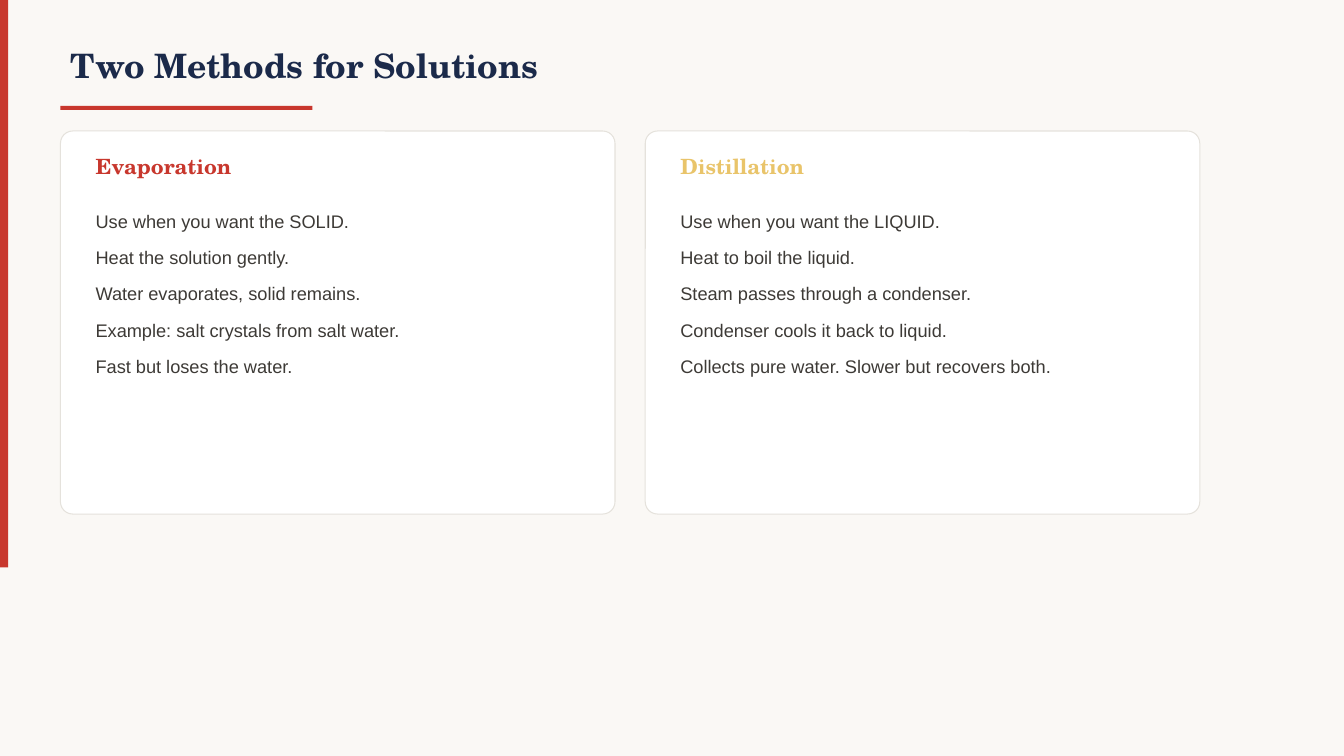
from dataclasses import dataclass

from pptx import Presentation
from pptx.dml.color import RGBColor
from pptx.enum.shapes import MSO_SHAPE
from pptx.enum.text import MSO_ANCHOR, PP_ALIGN
from pptx.shapes.autoshape import Shape
from pptx.slide import Slide
from pptx.text.text import TextFrame
from pptx.util import Inches, Pt

HEADING_FONT = "TeX Gyre Schola"
BODY_FONT = "Arial"
RED = "C8372D"
NAVY = "1B2A4A"
GOLD = "E9C46A"
CHARCOAL = "3D3A36"
CREAM = "FAF8F5"
WHITE = "FFFFFF"
BORDER = "E5E2DC"

MARGIN = 0.6
CARD_TOP = 1.3
CARD_WIDTH = 5.5
CARD_HEIGHT = 3.8
CARD_GAP = 0.3
CARD_PADDING = 0.25


@dataclass(frozen=True)
class Method:
    name: str
    color: str
    points: tuple[str, ...]


METHODS = (
    Method("Evaporation", RED, (
        "Use when you want the SOLID.",
        "Heat the solution gently.",
        "Water evaporates, solid remains.",
        "Example: salt crystals from salt water.",
        "Fast but loses the water.",
    )),
    Method("Distillation", GOLD, (
        "Use when you want the LIQUID.",
        "Heat to boil the liquid.",
        "Steam passes through a condenser.",
        "Condenser cools it back to liquid.",
        "Collects pure water. Slower but recovers both.",
    )),
)


def rgb(color: str) -> RGBColor:
    return RGBColor.from_string(color)


def add_block(slide: Slide, kind: MSO_SHAPE, left: float, top: float,
              width: float, height: float, color: str) -> Shape:
    shape = slide.shapes.add_shape(
        kind, Inches(left), Inches(top), Inches(width), Inches(height))
    shape.shadow.inherit = False
    shape.fill.solid()
    shape.fill.fore_color.rgb = rgb(color)
    shape.line.fill.background()
    return shape


def write_text(text_frame: TextFrame, text: str, font_name: str, size: float,
               color: str, bold: bool, anchor: MSO_ANCHOR) -> None:
    text_frame.text = text
    text_frame.word_wrap = True
    text_frame.vertical_anchor = anchor
    for paragraph in text_frame.paragraphs:
        paragraph.alignment = PP_ALIGN.LEFT
        for run in paragraph.runs:
            run.font.name = font_name
            run.font.size = Pt(size)
            run.font.bold = bold
            run.font.color.rgb = rgb(color)


def add_text_frame(slide: Slide, left: float, top: float,
                   width: float, height: float) -> TextFrame:
    return slide.shapes.add_textbox(
        Inches(left), Inches(top), Inches(width), Inches(height)).text_frame


def add_title(slide: Slide, text: str) -> None:
    title = slide.shapes.title
    title.left, title.top = Inches(MARGIN), Inches(0.3)
    title.width, title.height = Inches(10), Inches(0.7)
    write_text(title.text_frame, text, HEADING_FONT, 24, NAVY, True, MSO_ANCHOR.MIDDLE)


def add_method_card(slide: Slide, method: Method, left: float) -> None:
    card = add_block(slide, MSO_SHAPE.ROUNDED_RECTANGLE, left, CARD_TOP,
                     CARD_WIDTH, CARD_HEIGHT, WHITE)
    card.adjustments[0] = 0.032
    card.line.color.rgb = rgb(BORDER)
    card.line.width = Pt(0.75)

    text_left = left + CARD_PADDING
    text_width = CARD_WIDTH - 2 * CARD_PADDING
    heading = add_text_frame(slide, text_left, CARD_TOP + 0.15, text_width, 0.4)
    write_text(heading, method.name, HEADING_FONT, 15, method.color, True, MSO_ANCHOR.MIDDLE)

    body = add_text_frame(slide, text_left, CARD_TOP + 0.65, text_width, 2.9)
    write_text(body, "\n".join(method.points), BODY_FONT, 13, CHARCOAL, False, MSO_ANCHOR.TOP)
    for paragraph in body.paragraphs:
        paragraph.line_spacing = 1.4
        paragraph.space_after = Pt(4)


def main() -> None:
    presentation = Presentation()
    presentation.slide_width = Inches(13.33)
    presentation.slide_height = Inches(7.5)
    title_only_layout = presentation.slide_layouts[5]
    slide = presentation.slides.add_slide(title_only_layout)
    slide.background.fill.solid()
    slide.background.fill.fore_color.rgb = rgb(CREAM)

    # Side bar, title and underline
    add_block(slide, MSO_SHAPE.RECTANGLE, 0, 0, 0.08, 5.63, RED)
    add_title(slide, "Two Methods for Solutions")
    add_block(slide, MSO_SHAPE.RECTANGLE, MARGIN, 1.05, 2.5, 0.04, RED)

    # One card per method, side by side
    for column, method in enumerate(METHODS):
        add_method_card(slide, method, MARGIN + column * (CARD_WIDTH + CARD_GAP))

    presentation.save("out.pptx")


if __name__ == "__main__":
    main()
